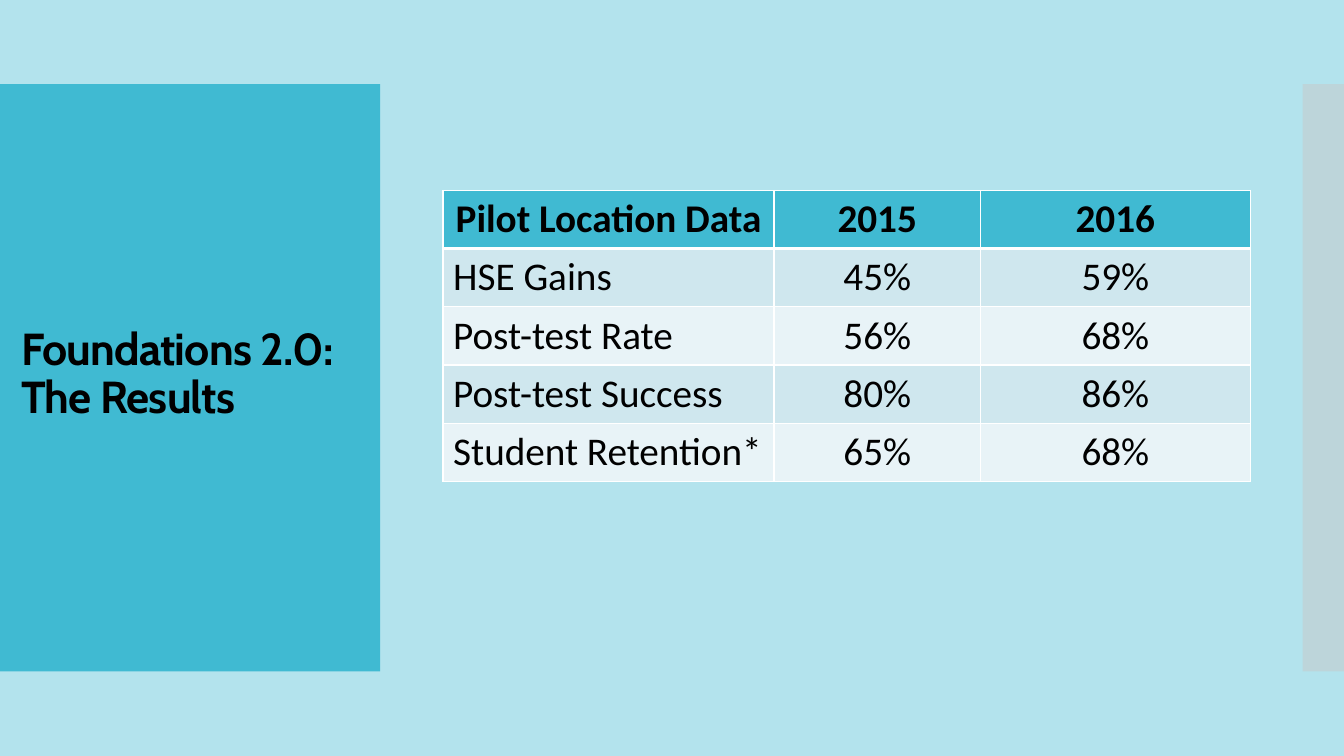
import pptx
import pptx.util
import pptx.dml.color
import pptx.enum.shapes
import pptx.enum.text
import pptx.oxml
import pptx.oxml.ns

Pt = pptx.util.Pt
ALIGN = pptx.enum.text.PP_ALIGN
ANCHOR = pptx.enum.text.MSO_ANCHOR

COLORS = {
    "background": "B3E3ED",
    "accent": "40BAD2",
    "side": "C8C8C8",
    "band_dark": "CFE7EE",
    "band_light": "E8F3F7",
    "border": "FFFFFF",
    "text": "000000",
}

ROWS = [
    ("Pilot Location Data", "2015", "2016"),
    ("HSE Gains", "45%", "59%"),
    ("Post-test Rate", "56%", "68%"),
    ("Post-test Success", "80%", "86%"),
    ("Student Retention*", "65%", "68%"),
]
COLUMN_SHARES = (0.41, 0.256, 0.334)


def rgb(name):
    return pptx.dml.color.RGBColor.from_string(COLORS[name])


def add_run(p, text, font, size, bold):
    r = p.add_run()
    r.text = text
    r.font.name = font
    r.font.size = Pt(size)
    r.font.bold = bold
    r.font.color.rgb = rgb("text")
    return r


def add_panel(s, box, color, alpha=None):
    """Draw a borderless rectangle; alpha is its opacity in percent."""
    sp = s.shapes.add_shape(pptx.enum.shapes.MSO_SHAPE.RECTANGLE, *map(Pt, box))
    sp.shadow.inherit = False
    sp.line.fill.background()
    sp.fill.solid()
    sp.fill.fore_color.rgb = rgb(color)
    if alpha is not None:
        clr = sp.fill._xPr.find(".//" + pptx.oxml.ns.qn("a:srgbClr"))
        clr.append(pptx.oxml.parse_xml(
            f'<a:alpha {pptx.oxml.ns.nsdecls("a")} val="{alpha * 1000}"/>'))


def add_title_panel(s, box, text):
    add_panel(s, box, "accent")
    left, top, width, height = box
    tb = s.shapes.add_textbox(Pt(left + 8), Pt(top + 26), Pt(width - 14), Pt(height - 56))
    tf = tb.text_frame
    tf.word_wrap = True
    tf.vertical_anchor = ANCHOR.MIDDLE
    p = tf.paragraphs[0]
    p.line_spacing = 0.9
    r = add_run(p, text, "Cabin", 32, True)
    r.font._element.set("spc", "-60")


def set_borders(cell, top, bottom):
    """Set all four cell borders; the side borders are 1 pt wide."""
    tcPr = cell._tc.get_or_add_tcPr()
    for side, width in (("L", 1), ("R", 1), ("T", top), ("B", bottom)):
        tcPr.append(pptx.oxml.parse_xml(
            f'<a:ln{side} {pptx.oxml.ns.nsdecls("a")} w="{Pt(width)}"><a:solidFill>'
            f'<a:srgbClr val="{COLORS["border"]}"/></a:solidFill></a:ln{side}>'))


def add_results_table(s, box):
    left, top, width, height = box
    table = s.shapes.add_table(len(ROWS), len(COLUMN_SHARES), *map(Pt, box)).table
    table.horz_banding = False
    for column, share in zip(table.columns, COLUMN_SHARES):
        column.width = Pt(width * share)
    for i, values in enumerate(ROWS):
        table.rows[i].height = Pt(height / len(ROWS))
        header = i == 0
        fill = "accent" if header else ("band_light", "band_dark")[i % 2]
        for j, value in enumerate(values):
            cell = table.cell(i, j)
            set_borders(cell, 3 if i == 1 else 1, 3 if header else 1)
            cell.fill.solid()
            cell.fill.fore_color.rgb = rgb(fill)
            p = cell.text_frame.paragraphs[0]
            p.alignment = ALIGN.CENTER if header or j else ALIGN.LEFT
            add_run(p, value, "Calibri", 28, header)


def main():
    prs = pptx.Presentation()
    prs.slide_width, prs.slide_height = Pt(960), Pt(540)
    s = prs.slides.add_slide(prs.slide_layouts[6])
    s.background.fill.solid()
    s.background.fill.fore_color.rgb = rgb("background")
    add_title_panel(s, (0, 60, 271.5, 419.5), "Foundations 2.0: The Results")
    add_panel(s, (930.5, 60, 29.5, 419.5), "side", alpha=50)
    add_results_table(s, (316.5, 136, 576.5, 208))
    prs.save("out.pptx")


if __name__ == "__main__":
    main()
